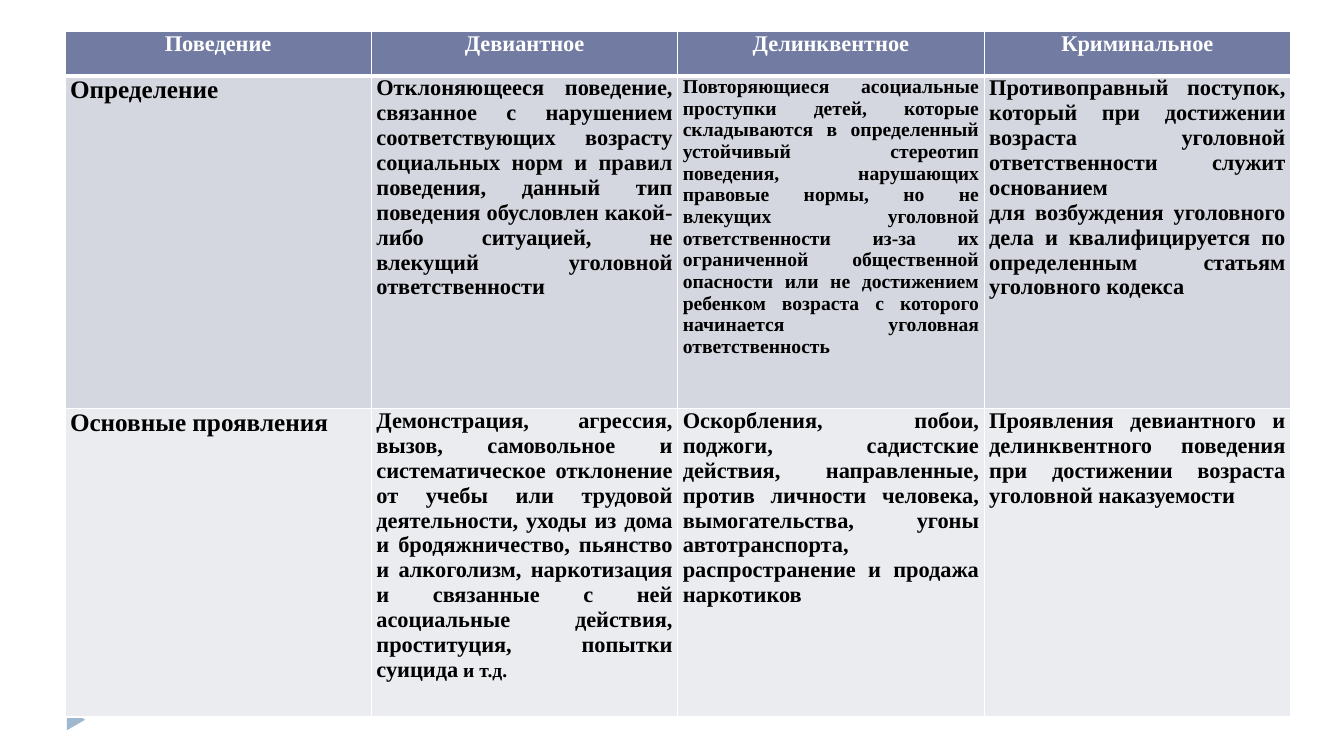
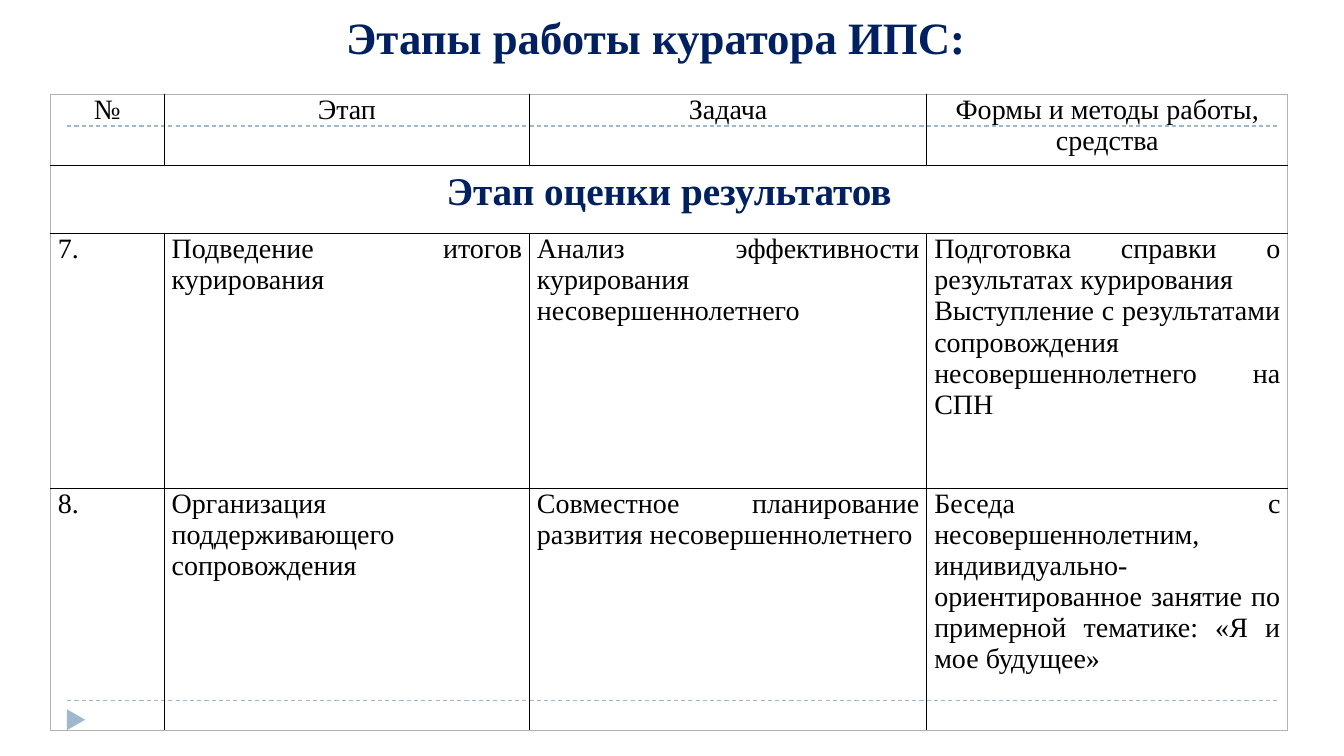
from lxml import etree
from pptx import Presentation
from pptx.dml.color import RGBColor
from pptx.enum.dml import MSO_LINE_DASH_STYLE as Dash
from pptx.enum.shapes import MSO_CONNECTOR as Conn, MSO_SHAPE as Shape
from pptx.enum.text import MSO_ANCHOR as Anchor, PP_ALIGN as Align
from pptx.oxml.ns import qn
from pptx.util import Pt

FONT = "Times New Roman"
WHITE, BLACK, NAVY = "FFFFFF", "000000", "002060"
SKY, SLATE, GREY = "9FB8CD", "727CA3", "B2B2B2"
BANDS = ["D5D7E0", "EBECF0"]

KINDS = [
    ["Поведение", "Девиантное", "Делинквентное", "Криминальное"],
    ["Определение",
     "Отклоняющееся поведение, связанное с нарушением соответствующих возрасту "
     "социальных норм и правил поведения, данный тип поведения обусловлен "
     "какой-либо ситуацией, не влекущий уголовной ответственности",
     "Повторяющиеся асоциальные проступки детей, которые складываются в "
     "определенный устойчивый стереотип поведения, нарушающих правовые нормы, "
     "но не влекущих уголовной ответственности из-за их ограниченной "
     "общественной опасности или не достижением ребенком возраста с которого "
     "начинается уголовная ответственность",
     "Противоправный поступок, который при достижении возраста уголовной "
     "ответственности служит основанием\n"
     "для возбуждения уголовного дела и квалифицируется по определенным "
     "статьям уголовного кодекса"],
    ["Основные проявления",
     "Демонстрация, агрессия, вызов, самовольное и систематическое отклонение "
     "от учебы или трудовой деятельности, уходы из дома и бродяжничество, "
     "пьянство и алкоголизм, наркотизация и связанные с ней асоциальные "
     "действия, проституция, попытки суицида",
     "Оскорбления, побои, поджоги, садистские действия, направленные, против "
     "личности человека, вымогательства, угоны автотранспорта, "
     "распространение и продажа наркотиков",
     "Проявления девиантного и делинквентного поведения при достижении "
     "возраста уголовной наказуемости"],
]

STAGES = [
    ["№", "Этап", "Задача", "Формы и методы работы, средства"],
    ["Этап оценки результатов", "", "", ""],
    ["7.", "Подведение итогов курирования",
     "Анализ эффективности курирования несовершеннолетнего",
     "Подготовка справки о результатах курирования\n"
     "Выступление с результатами сопровождения несовершеннолетнего на СПН"],
    ["8.", "Организация поддерживающего сопровождения",
     "Совместное планирование развития несовершеннолетнего",
     "Беседа с несовершеннолетним, индивидуально-ориентированное занятие по "
     "примерной тематике: «Я и мое будущее»"],
]


def hue(code):
    return RGBColor.from_string(code)


def style(font, size, color, bold=False):
    font.name, font.size, font.bold = FONT, Pt(size), bold
    font.color.rgb = hue(color)


def write(frame, text, align, size, color, bold=False):
    frame.text = text
    frame.word_wrap = True
    for para in frame.paragraphs:
        para.alignment = align
        for run in para.runs:
            style(run.font, size, color, bold)


def pad(area, side, end=0):
    area.margin_left = area.margin_right = Pt(side)
    area.margin_top = area.margin_bottom = Pt(end)


def edge(cell, sides):
    """Draw cell borders from {side: (colour, width)}."""
    props = cell._tc.get_or_add_tcPr()
    for side in "LRTB":
        color, width = sides[side]
        line = etree.SubElement(props, qn("a:ln" + side), w=str(Pt(width)))
        fill = etree.SubElement(line, qn("a:solidFill"))
        etree.SubElement(fill, qn("a:srgbClr"), val=color)


def grid(slide, left, top, cols, rows):
    """Add a plain table with the given column widths and row heights."""
    table = slide.shapes.add_table(
        len(rows), len(cols), Pt(left), Pt(top),
        Pt(sum(cols)), Pt(sum(rows))).table
    table.first_row = table.horz_banding = False
    for col, width in zip(table.columns, cols):
        col.width = Pt(width)
    for row, height in zip(table.rows, rows):
        row.height = Pt(height)
    return table


def decor(slide, left, top, width, height):
    """Dashed rules and the corner marker."""
    for y in (top, top + height):
        rule = slide.shapes.add_connector(
            Conn.STRAIGHT, Pt(left), Pt(y), Pt(left + width), Pt(y))
        rule.line.color.rgb = hue(SKY)
        rule.line.width = Pt(0.75)
        rule.line.dash_style = Dash.DASH
        etree.SubElement(rule._element.spPr, qn("a:effectLst"))
    mark = slide.shapes.add_shape(
        Shape.ISOSCELES_TRIANGLE, Pt(left - 1.2), Pt(top + height + 7.2),
        Pt(15), Pt(13))
    mark.rotation = 90
    mark.shadow.inherit = False
    mark.fill.solid()
    mark.fill.fore_color.rgb = hue(SKY)
    mark.line.fill.background()


def title(slide, text, left, top, width, height):
    box = slide.shapes.add_textbox(Pt(left), Pt(top), Pt(width), Pt(height))
    box.text_frame.vertical_anchor = Anchor.MIDDLE
    write(box.text_frame, text, Align.CENTER, 32, NAVY, True)


def kinds(slide, left, top, width):
    """Banded table that compares the kinds of behaviour."""
    table = grid(slide, left, top, [width / 4] * 4, [31.7, 237.6, 220.3])
    for r, row in enumerate(KINDS):
        for c, text in enumerate(row):
            cell = table.cell(r, c)
            head = r == 0
            size = 16
            if not head and c == 0:
                size = 18
            elif (r, c) == (1, 2):
                size = 14
            pad(cell, 3.6)
            write(cell.text_frame, text, Align.CENTER if head else Align.JUSTIFY,
                  size, WHITE if head else BLACK, True)
            sides = dict.fromkeys("LRTB", (WHITE, 1))
            if r < 2:
                sides["T" if r else "B"] = (WHITE, 3)
            edge(cell, sides)
            cell.fill.solid()
            cell.fill.fore_color.rgb = hue(SLATE if head else BANDS[r - 1])
    # Smaller ending of the long list
    more = table.cell(2, 1).text_frame.paragraphs[0].add_run()
    more.text = " и т.д."
    style(more.font, 14, BLACK, True)


def stages(slide, left, top):
    """Ruled table of work stages with one merged heading row."""
    table = grid(slide, left, top, [81.4, 260.8, 283.9, 257.8],
                 [50.5, 49, 181.8, 172.8])
    table.cell(1, 0).merge(table.cell(1, 3))
    for r, row in enumerate(STAGES):
        for c, text in enumerate(row):
            cell = table.cell(r, c)
            band = r == 1
            pad(cell, *((7.2, 3.6) if band else (5.3, 0)))
            if text:
                write(cell.text_frame, text,
                      Align.CENTER if r < 2 else Align.JUSTIFY,
                      28 if band else 20, NAVY if band else BLACK, band)
            outer = {"L": c == 0, "R": c == 3 or band, "T": r == 0, "B": r == 3}
            edge(cell, {side: (GREY if out else BLACK, 1)
                        for side, out in outer.items()})
            cell.fill.background()


def main():
    deck = Presentation()
    deck.slide_width, deck.slide_height = Pt(960), Pt(540)
    first, second = [deck.slides.add_slide(deck.slide_layouts[6])
                     for _ in range(2)]
    for slide in (first, second):
        decor(slide, 48, 90, 864, 410.4)
    kinds(first, 46.4, 22.5, 875.5)
    title(second, "Этапы работы куратора ИПС:", 48, -5.5, 841, 63)
    stages(second, 36, 67.5)
    deck.save("out.pptx")


if __name__ == "__main__":
    main()
